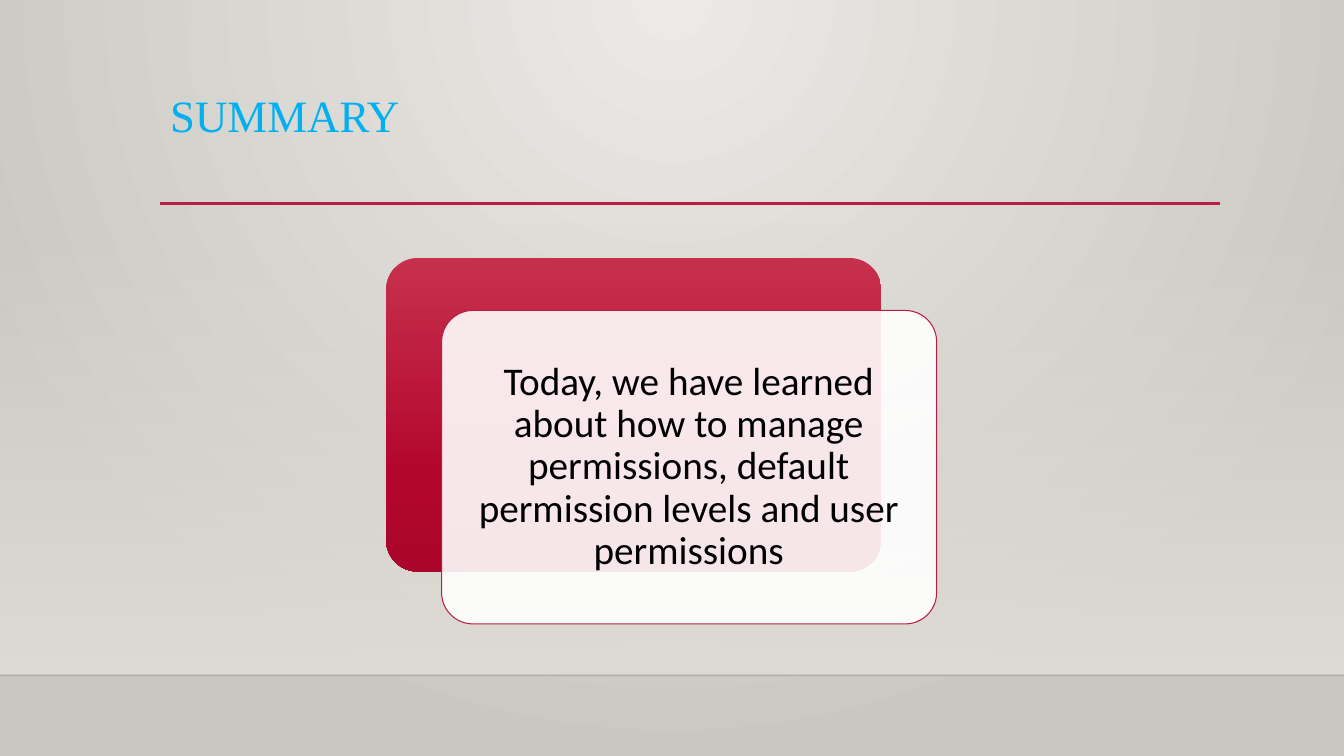
from dataclasses import dataclass

from lxml import etree
from pptx import Presentation
from pptx.dml.color import RGBColor
from pptx.enum import shapes, text
from pptx.oxml import ns
from pptx.util import Inches, Pt

CRIMSON = RGBColor(0xB7, 0x1E, 0x42)
CRIMSON_LIGHT = RGBColor(0xC7, 0x30, 0x4C)
CRIMSON_DEEP = RGBColor(0xB3, 0x06, 0x2F)
CRIMSON_DARK = RGBColor(0xAA, 0x06, 0x2C)
SKY = RGBColor(0x00, 0xB0, 0xF0)
WHITE = RGBColor(0xFF, 0xFF, 0xFF)
BLACK = RGBColor(0x00, 0x00, 0x00)
FLOOR_EDGE = RGBColor(0x00, 0x00, 0x01)
WALL_LIGHT = RGBColor(0xEC, 0xEA, 0xE7)
WALL_DARK = RGBColor(0xCA, 0xC7, 0xC1)
HAZE = RGBColor(0xDF, 0xDB, 0xD5)

SLIDE_WIDTH, SLIDE_HEIGHT = 13.33, 7.5
FLOOR_TOP = 6.7
CARD_WIDTH, CARD_HEIGHT = 4.91, 3.11


@dataclass(frozen=True)
class Stop:
    position: int
    color: RGBColor
    opacity: int = 100


@dataclass(frozen=True)
class Rule:
    left: float
    right: float
    top: float
    color: RGBColor
    weight: float
    opacity: int = 100


@dataclass(frozen=True)
class Label:
    left: float
    top: float
    width: float
    height: float
    words: str
    font: str
    size: int
    color: RGBColor
    align: text.PP_ALIGN = text.PP_ALIGN.LEFT
    anchor: text.MSO_ANCHOR = text.MSO_ANCHOR.TOP
    side_inset: float = 0.1
    end_inset: float = 0.05


RULES = (
    Rule(0, SLIDE_WIDTH, FLOOR_TOP, FLOOR_EDGE, 1, 20),
    Rule(1.59, 12.1, 2.02, CRIMSON, 2.5),
)
TITLE = Label(1.59, 0.88, 10.5, 1.15, "SUMMARY", "Times New Roman", 32, SKY)
MESSAGE = Label(
    4.47, 3.17, 4.72, 2.93,
    "Today, we have learned about how to manage permissions, "
    "default permission levels and user permissions",
    "Calibri", 28, BLACK, text.PP_ALIGN.CENTER, text.MSO_ANCHOR.MIDDLE, 0.12, 0.12,
)


def set_opacity(element, percent: int) -> None:
    color = element.find(".//" + ns.qn("a:srgbClr"))
    etree.SubElement(color, ns.qn("a:alpha"), val=str(percent * 1000))


def set_gradient(fill, element, stops: tuple[Stop, ...], radial: bool = False) -> None:
    fill.gradient()
    gradient = element.find(".//" + ns.qn("a:gradFill"))
    for child in list(gradient):
        gradient.remove(child)
    stop_list = etree.SubElement(gradient, ns.qn("a:gsLst"))
    for stop in stops:
        entry = etree.SubElement(stop_list, ns.qn("a:gs"), pos=str(stop.position * 1000))
        etree.SubElement(entry, ns.qn("a:srgbClr"), val=str(stop.color))
        set_opacity(entry, stop.opacity)
    if radial:
        center = etree.SubElement(gradient, ns.qn("a:path"), path="circle")
        etree.SubElement(center, ns.qn("a:fillToRect"), l="43000", t="0", r="43000", b="100000")
    else:
        etree.SubElement(gradient, ns.qn("a:lin"), ang="5400000", scaled="0")


def add_panel(page, kind: shapes.MSO_SHAPE, left: float, top: float, width: float, height: float):
    panel = page.shapes.add_shape(kind, Inches(left), Inches(top), Inches(width), Inches(height))
    panel.shadow.inherit = False
    panel.line.fill.background()
    return panel


def add_card(page, left: float, top: float):
    card = add_panel(page, shapes.MSO_SHAPE.ROUNDED_RECTANGLE, left, top, CARD_WIDTH, CARD_HEIGHT)
    card.adjustments[0] = 0.1
    return card


def add_rule(page, rule: Rule) -> None:
    line = page.shapes.add_connector(
        shapes.MSO_CONNECTOR.STRAIGHT,
        Inches(rule.left), Inches(rule.top), Inches(rule.right), Inches(rule.top),
    )
    line.line.color.rgb = rule.color
    line.line.width = Pt(rule.weight)
    properties = line._element.spPr
    set_opacity(properties, rule.opacity)
    etree.SubElement(properties, ns.qn("a:effectLst"))


def add_label(page, label: Label) -> None:
    box = page.shapes.add_textbox(
        Inches(label.left), Inches(label.top), Inches(label.width), Inches(label.height)
    )
    frame = box.text_frame
    frame.word_wrap = True
    frame.vertical_anchor = label.anchor
    frame.margin_left = frame.margin_right = Inches(label.side_inset)
    frame.margin_top = frame.margin_bottom = Inches(label.end_inset)
    frame.text = label.words
    para = frame.paragraphs[0]
    para.alignment = label.align
    para.line_spacing = 0.9
    span = para.runs[0]
    span.font.name = label.font
    span.font.size = Pt(label.size)
    span.font.color.rgb = label.color


def main() -> None:
    deck = Presentation()
    deck.slide_width, deck.slide_height = Inches(SLIDE_WIDTH), Inches(SLIDE_HEIGHT)
    page = deck.slides.add_slide(deck.slide_layouts[6])
    wall = (Stop(0, WALL_LIGHT), Stop(100, WALL_DARK))
    set_gradient(page.background.fill, page._element, wall, radial=True)

    haze = add_panel(page, shapes.MSO_SHAPE.RECTANGLE, 0, 2.21, SLIDE_WIDTH, FLOOR_TOP - 2.21)
    set_gradient(haze.fill, haze._element, (Stop(0, HAZE, 0), Stop(100, HAZE)))
    for rule in RULES:
        add_rule(page, rule)
    add_label(page, TITLE)

    back_card = add_card(page, 3.83, 2.56)
    crimson = (Stop(0, CRIMSON_LIGHT), Stop(69, CRIMSON_DEEP), Stop(100, CRIMSON_DARK))
    set_gradient(back_card.fill, back_card._element, crimson)

    front_card = add_card(page, 4.38, 3.08)
    front_card.fill.solid()
    front_card.fill.fore_color.rgb = WHITE
    set_opacity(front_card._element.spPr, 90)
    front_card.line.color.rgb = CRIMSON
    front_card.line.width = Pt(0.75)
    add_label(page, MESSAGE)

    deck.save("out.pptx")


if __name__ == "__main__":
    main()
